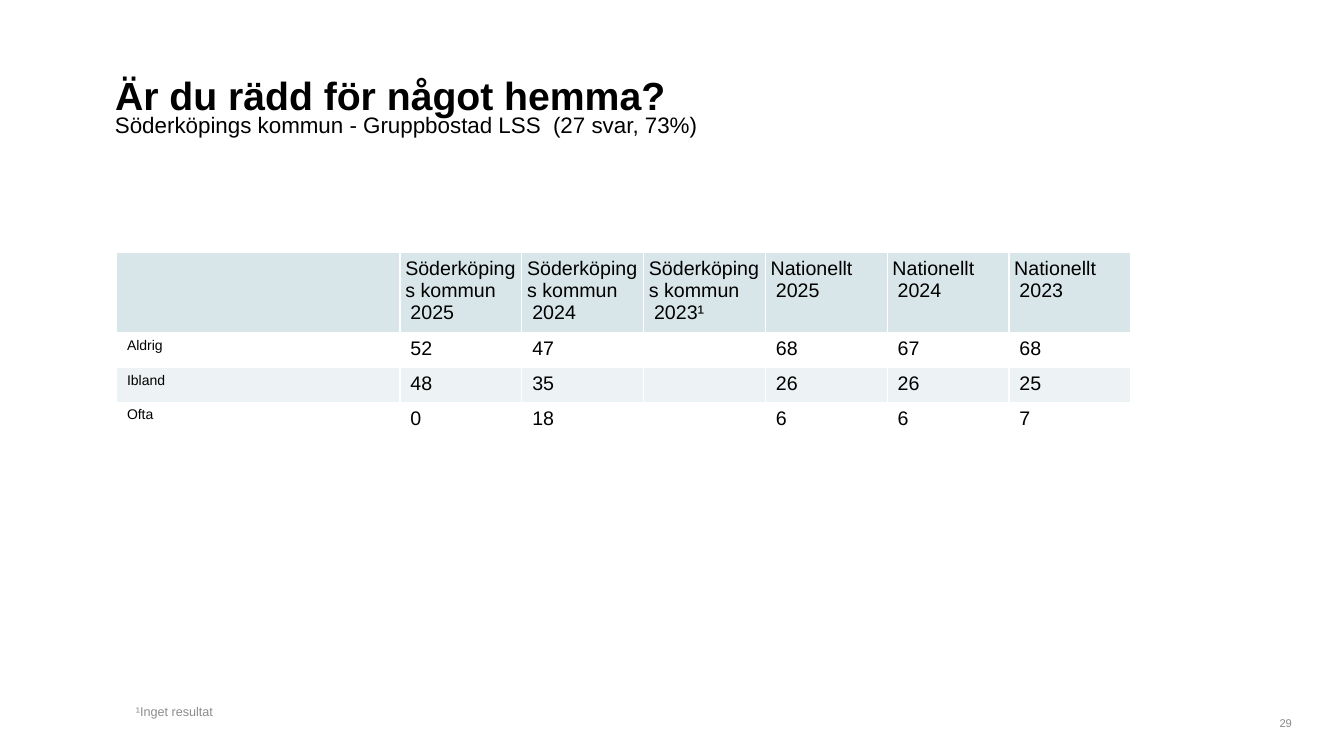
from lxml import etree
from pptx import Presentation
from pptx.dml.color import RGBColor
from pptx.enum.text import MSO_ANCHOR, MSO_AUTO_SIZE, PP_ALIGN
from pptx.oxml.ns import qn
from pptx.util import Pt

PX = 9525
FONT = "Arial"
BLACK = RGBColor(0x00, 0x00, 0x00)
WHITE = RGBColor(0xFF, 0xFF, 0xFF)
NOTE_GRAY = RGBColor(0x8C, 0x8C, 0x8C)
NUMBER_GRAY = RGBColor(0x89, 0x89, 0x89)
HEADER_BLUE = RGBColor(0xD9, 0xE6, 0xE9)
BAND_BLUE = RGBColor(0xED, 0xF3, 0xF4)
TOP, BOTTOM = MSO_ANCHOR.TOP, MSO_ANCHOR.BOTTOM
LEFT, RIGHT = PP_ALIGN.LEFT, PP_ALIGN.RIGHT
NO_AUTOFIT = MSO_AUTO_SIZE.NONE


def write_text(frame, text, size=14, color=BLACK, bold=False, align=LEFT, indents=(0,)):
    for index, (line, indent) in enumerate(zip(text.split("\n"), indents)):
        paragraph = frame.paragraphs[0] if index == 0 else frame.add_paragraph()
        paragraph.alignment = align
        paragraph._p.get_or_add_pPr().set("marL", str(indent * PX))
        if not line:
            etree.SubElement(paragraph._p, qn("a:endParaRPr"), sz=str(size * 100))
            continue
        run = paragraph.add_run()
        run.text = line
        run.font.name = FONT
        run.font.size = Pt(size)
        run.font.bold = bold
        run.font.color.rgb = color


def place_box(shape, left, top, width, height, anchor=TOP, top_inset=5, wrap=True):
    shape.left, shape.top = left * PX, top * PX
    shape.width, shape.height = width * PX, height * PX
    frame = shape.text_frame
    frame.auto_size = NO_AUTOFIT
    frame.word_wrap = wrap
    frame.vertical_anchor = anchor
    frame.margin_top = top_inset * PX
    return frame


presentation = Presentation()
presentation.slide_width = 1280 * PX
presentation.slide_height = 720 * PX
slide = presentation.slides.add_slide(presentation.slide_layouts[5])

title_frame = place_box(slide.shapes.title, 100, 60, 1080, 40, top_inset=8, wrap=False)
write_text(title_frame, "Är du rädd för något hemma?", size=28, bold=True)

subtitle = slide.shapes.add_textbox(0, 0, PX, PX)
subtitle_frame = place_box(subtitle, 100, 100, 1080, 40, top_inset=6)
write_text(subtitle_frame, "Söderköpings kommun - Gruppbostad LSS  (27 svar, 73%)", size=16)

answers = [
    ["", "Söderköpings kommun\n2025", "Söderköpings kommun\n2024",
     "Söderköpings kommun\n2023¹", "Nationellt\n2025", "Nationellt\n2024", "Nationellt\n2023"],
    ["Aldrig", "52", "47", "", "68", "67", "68"],
    ["Ibland", "48", "35", "", "26", "26", "25"],
    ["Ofta", "0", "18", "", "6", "6", "7"],
]
column_widths = [270] + [116] * 6
row_heights = [77] + [33] * 3
row_fills = [HEADER_BLUE, WHITE, BAND_BLUE, WHITE]

table = slide.shapes.add_table(
    len(row_heights), len(column_widths), 111 * PX, 240 * PX,
    sum(column_widths) * PX, sum(row_heights) * PX,
).table
table.first_row = False
table.horz_banding = False
for column, width in zip(table.columns, column_widths):
    column.width = width * PX

for row_index, (row, height) in enumerate(zip(table.rows, row_heights)):
    row.height = height * PX
    for column_index, cell in enumerate(row.cells):
        cell.margin_left = cell.margin_right = 5 * PX
        cell.margin_top = cell.margin_bottom = 5 * PX
        cell.vertical_anchor = TOP
        is_label = row_index > 0 and column_index == 0
        write_text(cell.text_frame, answers[row_index][column_index],
                   size=10 if is_label else 14,
                   indents=(0, 5) if row_index == 0 else (5,))
        for side in ("a:lnL", "a:lnR", "a:lnT", "a:lnB"):
            border = etree.SubElement(cell._tc.get_or_add_tcPr(), qn(side), w=str(Pt(1)))
            border_fill = etree.SubElement(border, qn("a:solidFill"))
            etree.SubElement(border_fill, qn("a:srgbClr"), val=str(WHITE))
        cell.fill.solid()
        cell.fill.fore_color.rgb = row_fills[row_index]

footnote = slide.shapes.add_textbox(0, 0, PX, PX)
footnote_frame = place_box(footnote, 120, 310, 730, 380, anchor=BOTTOM)
write_text(footnote_frame, "¹Inget resultat", size=9, color=NOTE_GRAY)

page_number = slide.shapes.add_textbox(0, 0, PX, PX)
number_frame = place_box(page_number, 1200, 680, 40, 20, anchor=BOTTOM)
write_text(number_frame, "29", size=8, color=NUMBER_GRAY, align=RIGHT)

presentation.save("out.pptx")
